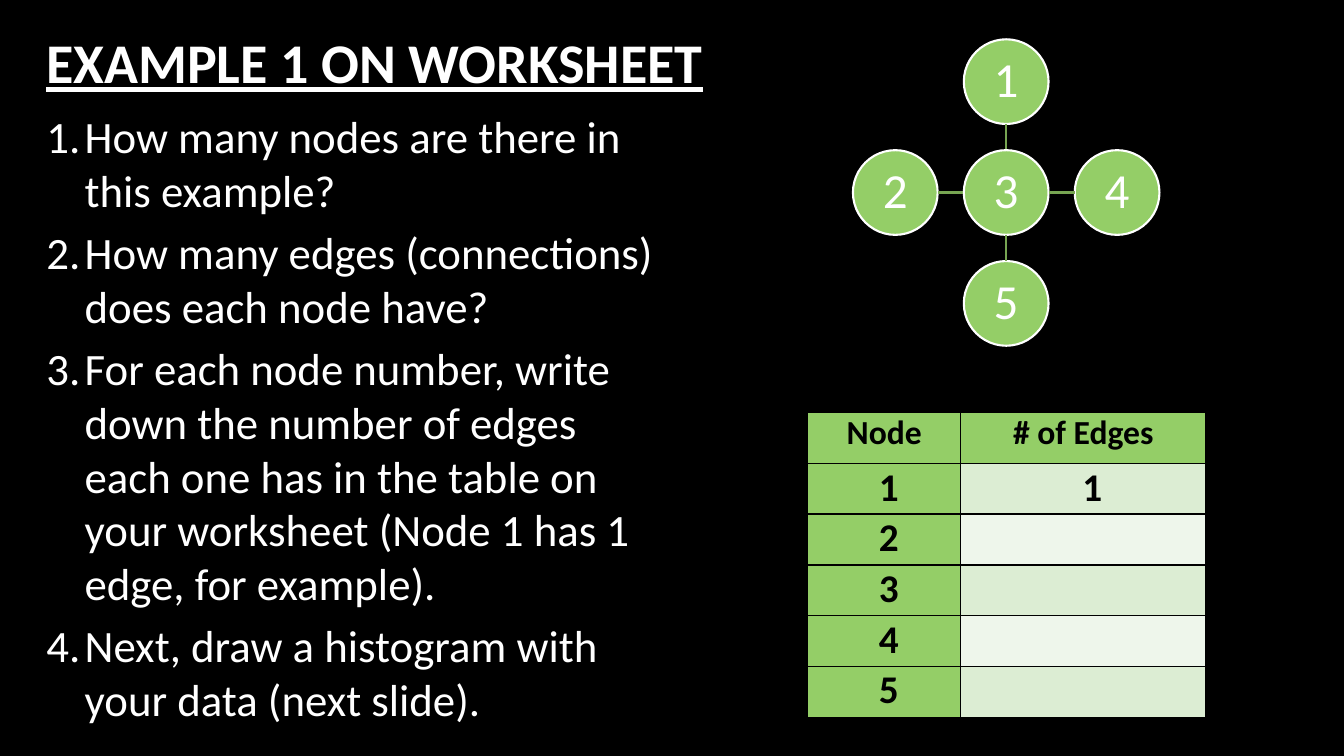
from dataclasses import dataclass
from lxml import etree
from pptx import Presentation
from pptx.dml.color import RGBColor
from pptx.enum.shapes import MSO_CONNECTOR, MSO_SHAPE
from pptx.enum.text import MSO_ANCHOR, MSO_AUTO_SIZE, PP_ALIGN
from pptx.oxml.ns import qn
from pptx.util import Inches, Pt

TITLE = "EXAMPLE 1 ON WORKSHEET"
QUESTIONS = [
    "How many nodes are there in this example?",
    "How many edges (connections) does each node have?",
    "For each node number, write down the number of edges each one has in "
    "the table on your worksheet (Node 1 has 1 edge, for example).",
    "Next, draw a histogram with your data (next slide).",
]
NODES = {"1": (0, -1), "2": (-1, 0), "3": (0, 0), "4": (1, 0), "5": (0, 1)}
TABLE = [("Node", "# of Edges"), ("1", "1"), ("2", ""), ("3", ""), ("4", ""), ("5", "")]

TITLE_BOX = (0.36, 0.19, 7.65, 0.84)
LIST_BOX = (0.36, 1.03, 6.31, 6.28)
TABLE_BOX = (8.01, 4.09, 3.95, 3.03)
COL_WIDTHS = (1.52, 2.43)
CELL_LEFT = (0.16, 0.25)
CELL_INSET = 0.07
HUB = (9.98, 1.91)
STEP, DIAMETER = 1.1, 0.84
INDENT = 0.38

OVAL = MSO_SHAPE.OVAL
STRAIGHT = MSO_CONNECTOR.STRAIGHT
LEFT, CENTER = PP_ALIGN.LEFT, PP_ALIGN.CENTER
TOP, MIDDLE = MSO_ANCHOR.TOP, MSO_ANCHOR.MIDDLE
NO_FIT = MSO_AUTO_SIZE.NONE


@dataclass(frozen=True)
class Theme:
    font: str = "Calibri"
    black: str = "000000"
    white: str = "FFFFFF"
    green: str = "94CE67"
    edge: str = "77A552"
    bands: tuple = ("DCEDD3", "EEF6EB")
    title: int = 40
    body: int = 32
    node: int = 35
    header: int = 24
    cell: int = 28
    line: float = 1.5
    border: int = 1


T = Theme()


def rgb(color):
    return RGBColor.from_string(color)


def place(s, box):
    s.left, s.top, s.width, s.height = (Inches(v) for v in box)


def add_run(p, text, size, color, bold=False, underline=False):
    r = p.add_run()
    r.text = text
    r.font.name, r.font.size = T.font, Pt(size)
    r.font.bold, r.font.underline = bold, underline
    r.font.color.rgb = rgb(color)


def add_title(s):
    place(s, TITLE_BOX)
    tf = s.text_frame
    tf.auto_size, tf.vertical_anchor = NO_FIT, MIDDLE
    p = tf.paragraphs[0]
    p.alignment = LEFT
    add_run(p, TITLE, T.title, T.white, True, True)


def add_questions(s):
    place(s, LIST_BOX)
    tf = s.text_frame
    tf.auto_size, tf.vertical_anchor = NO_FIT, TOP
    for i, question in enumerate(QUESTIONS):
        p = tf.add_paragraph() if i else tf.paragraphs[0]
        p.space_before = Pt(6 if i else 0)
        pPr = p._p.get_or_add_pPr()
        pPr.set("marL", str(Inches(INDENT)))
        pPr.set("indent", str(-Inches(INDENT)))
        etree.SubElement(pPr, qn("a:buFont"), typeface="+mj-lt")
        etree.SubElement(pPr, qn("a:buAutoNum"), type="arabicPeriod")
        add_run(p, question, T.body, T.white)


def add_node(shapes, label, dx, dy):
    x, y = HUB[0] + dx * STEP, HUB[1] + dy * STEP
    r = DIAMETER / 2
    s = shapes.add_shape(OVAL, *(Inches(v) for v in (x - r, y - r, DIAMETER, DIAMETER)))
    s.shadow.inherit = False
    s.fill.solid()
    s.fill.fore_color.rgb = rgb(T.green)
    s.line.color.rgb = rgb(T.white)
    s.line.width = Pt(T.line)
    tf = s.text_frame
    tf.margin_left = tf.margin_right = tf.margin_top = tf.margin_bottom = Inches(0.02)
    tf.vertical_anchor = MIDDLE
    p = tf.paragraphs[0]
    p.alignment, p.line_spacing = CENTER, 0.9
    add_run(p, label, T.node, T.white)


def add_edge(shapes, dx, dy):
    near, far = DIAMETER / 2, STEP - DIAMETER / 2
    ends = [HUB[0] + dx * near, HUB[1] + dy * near, HUB[0] + dx * far, HUB[1] + dy * far]
    line = shapes.add_connector(STRAIGHT, *(Inches(v) for v in ends))
    line.line.color.rgb = rgb(T.edge)
    line.line.width = Pt(T.line)
    etree.SubElement(line._element.spPr, qn("a:effectLst"))


def add_borders(cell):
    tcPr = cell._tc.get_or_add_tcPr()
    for i, side in enumerate(("lnL", "lnR", "lnT", "lnB")):
        ln = etree.Element(qn("a:" + side), w=str(Pt(T.border)))
        fill = etree.SubElement(ln, qn("a:solidFill"))
        etree.SubElement(fill, qn("a:srgbClr"), val=T.black)
        tcPr.insert(i, ln)


def add_table(shapes):
    box = (Inches(v) for v in TABLE_BOX)
    table = shapes.add_table(len(TABLE), len(COL_WIDTHS), *box).table
    for col, width in zip(table.columns, COL_WIDTHS):
        col.width = Inches(width)
    for i, row in enumerate(TABLE):
        for j, text in enumerate(row):
            header = i == 0
            cell = table.cell(i, j)
            cell.margin_left = Inches(CELL_INSET if header else CELL_LEFT[j])
            cell.margin_right = Inches(CELL_INSET)
            cell.margin_top = cell.margin_bottom = 0
            cell.vertical_anchor = MIDDLE if i == 1 else TOP
            cell.fill.solid()
            color = T.green if header or j == 0 else T.bands[(i - 1) % 2]
            cell.fill.fore_color.rgb = rgb(color)
            add_borders(cell)
            if text:
                p = cell.text_frame.paragraphs[0]
                p.alignment = CENTER
                add_run(p, text, T.header if header else T.cell, T.black, True)


def main():
    prs = Presentation()
    prs.slide_width, prs.slide_height = Inches(13.33), Inches(7.5)
    slide = prs.slides.add_slide(prs.slide_layouts[1])
    slide.background.fill.solid()
    slide.background.fill.fore_color.rgb = rgb(T.black)
    add_title(slide.shapes.title)
    add_questions(slide.placeholders[1])
    for label, (dx, dy) in NODES.items():
        add_node(slide.shapes, label, dx, dy)
        if dx or dy:
            add_edge(slide.shapes, dx, dy)
    add_table(slide.shapes)
    prs.save("out.pptx")


if __name__ == "__main__":
    main()
